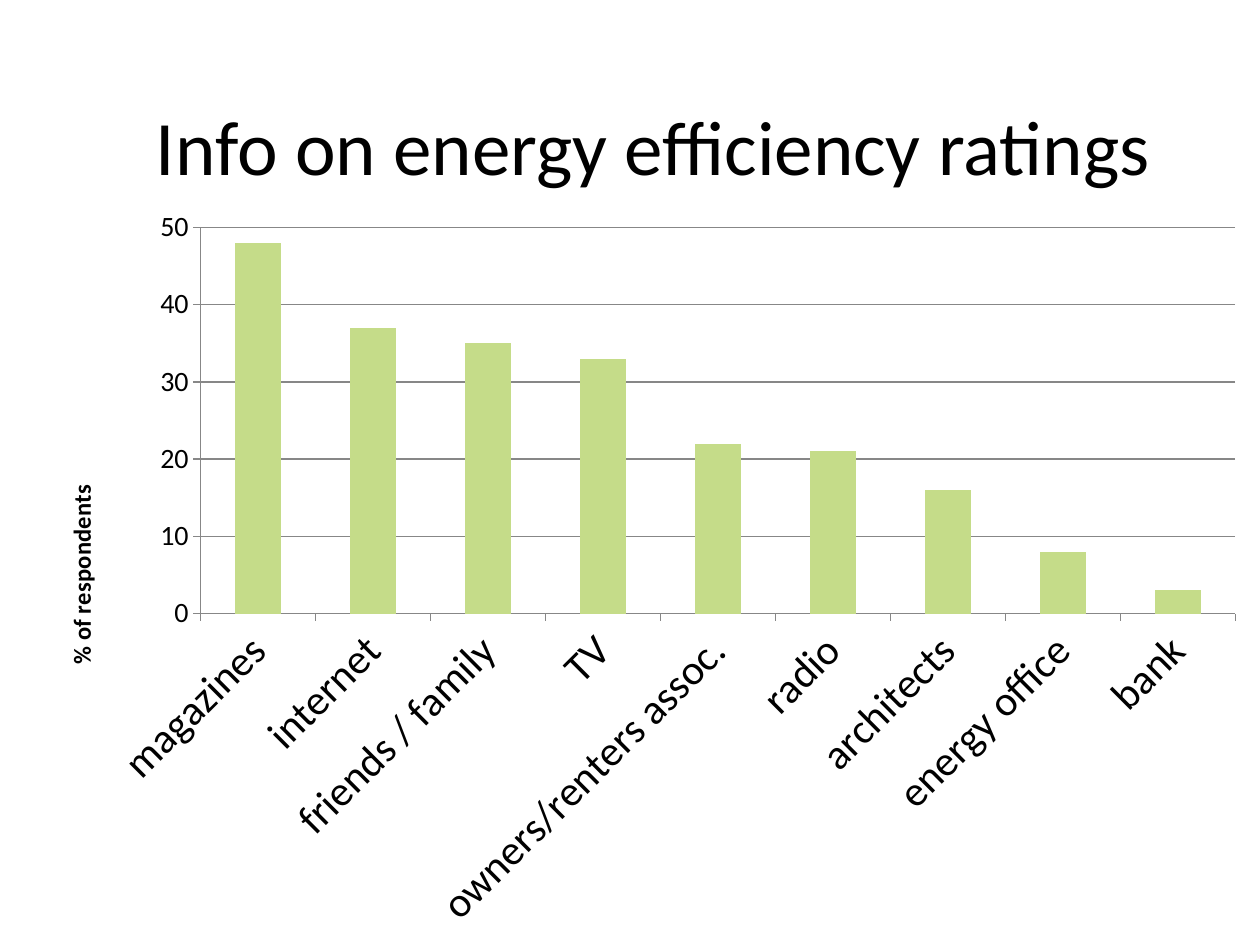
"""Build a slide with a column chart of sources of energy rating info."""
from lxml.etree import SubElement
from pptx import Presentation
from pptx.chart.data import CategoryChartData
from pptx.dml.color import RGBColor
from pptx.enum.chart import XL_CHART_TYPE, XL_TICK_MARK
from pptx.enum.text import MSO_ANCHOR, PP_ALIGN
from pptx.oxml.ns import qn
from pptx.util import Inches, Pt

COLORS = {"text": "000000", "bar": "C5DC89", "line": "878787"}
FONT = "Calibri"


def write(frame, text, size=14, bold=False, align=PP_ALIGN.CENTER):
    para = frame.paragraphs[0]
    para.alignment = align
    run = para.add_run()
    run.text = text
    run.font.name, run.font.size, run.font.bold = FONT, Pt(size), bold
    run.font.color.rgb = RGBColor.from_string(COLORS["text"])


def place(parent, index, **marks):
    for old in parent.findall(qn("c:layout")):
        parent.remove(old)
    layout = SubElement(parent, qn("c:layout"))
    parent.insert(index, layout)
    manual = SubElement(layout, qn("c:manualLayout"))
    for name, value in marks.items():
        SubElement(manual, qn(f"c:{name}")).set("val", str(value))


deck = Presentation()
deck.slide_width, deck.slide_height = Inches(10), Inches(7.5)
slide = deck.slides.add_slide(deck.slide_layouts[6])

title = slide.shapes.add_textbox(Inches(0.18), Inches(0.52), Inches(10.01), Inches(1.25))
title.text_frame.word_wrap = True
title.text_frame.vertical_anchor = MSO_ANCHOR.MIDDLE
write(title.text_frame, "Info on energy efficiency ratings", size=44)

shares = {
    "magazines": 48,
    "internet": 37,
    "friends / family": 35,
    "TV": 33,
    "owners/renters assoc.": 22,
    "radio": 21,
    "architects": 16,
    "energy office": 8,
    "bank": 3,
}
data = CategoryChartData(number_format="General")
data.categories = list(shares)
data.add_series("Series 1", list(shares.values()))
chart = slide.shapes.add_chart(
    XL_CHART_TYPE.COLUMN_CLUSTERED,
    Inches(0.18), Inches(1.55), Inches(9.82), Inches(5.95), data,
).chart
chart.has_legend = False
chart.has_title = False
chart.font.name, chart.font.size = FONT, Pt(10)
chart.font.color.rgb = RGBColor.from_string(COLORS["text"])

plot = chart.plots[0]
plot.gap_width = 150
plot.vary_by_categories = False
bars = plot.series[0]
bars.invert_if_negative = False
bars.format.fill.solid()
bars.format.fill.fore_color.rgb = RGBColor.from_string(COLORS["bar"])

base, scale = chart.category_axis, chart.value_axis
scale.minimum_scale, scale.maximum_scale, scale.major_unit = 0, 50, 10
scale.has_major_gridlines = True
for axis, size in ((base, 24), (scale, 16)):
    axis.major_tick_mark = XL_TICK_MARK.OUTSIDE
    font = axis.tick_labels.font
    font.name, font.size = FONT, Pt(size)
    font.color.rgb = RGBColor.from_string(COLORS["text"])
for part in (base, scale, scale.major_gridlines):
    part.format.line.width = Pt(0.75)
    part.format.line.color.rgb = RGBColor.from_string(COLORS["line"])
base._element.find(qn("c:txPr")).find(qn("a:bodyPr")).set("rot", "-2700000")

label = scale.axis_title
write(label.text_frame, "% of respondents", size=14, bold=True)
body = label._element.find(".//" + qn("a:bodyPr"))
body.set("rot", "-5400000")
body.set("vert", "horz")
place(label._element, 1, xMode="edge", yMode="edge", x=0.03, y=0.38)
area = chart._chartSpace.find(".//" + qn("c:plotArea"))
place(area, 0, layoutTarget="inner", xMode="edge", yMode="edge",
      x=0.144, y=0.043, w=0.836, h=0.515)

deck.save("out.pptx")
